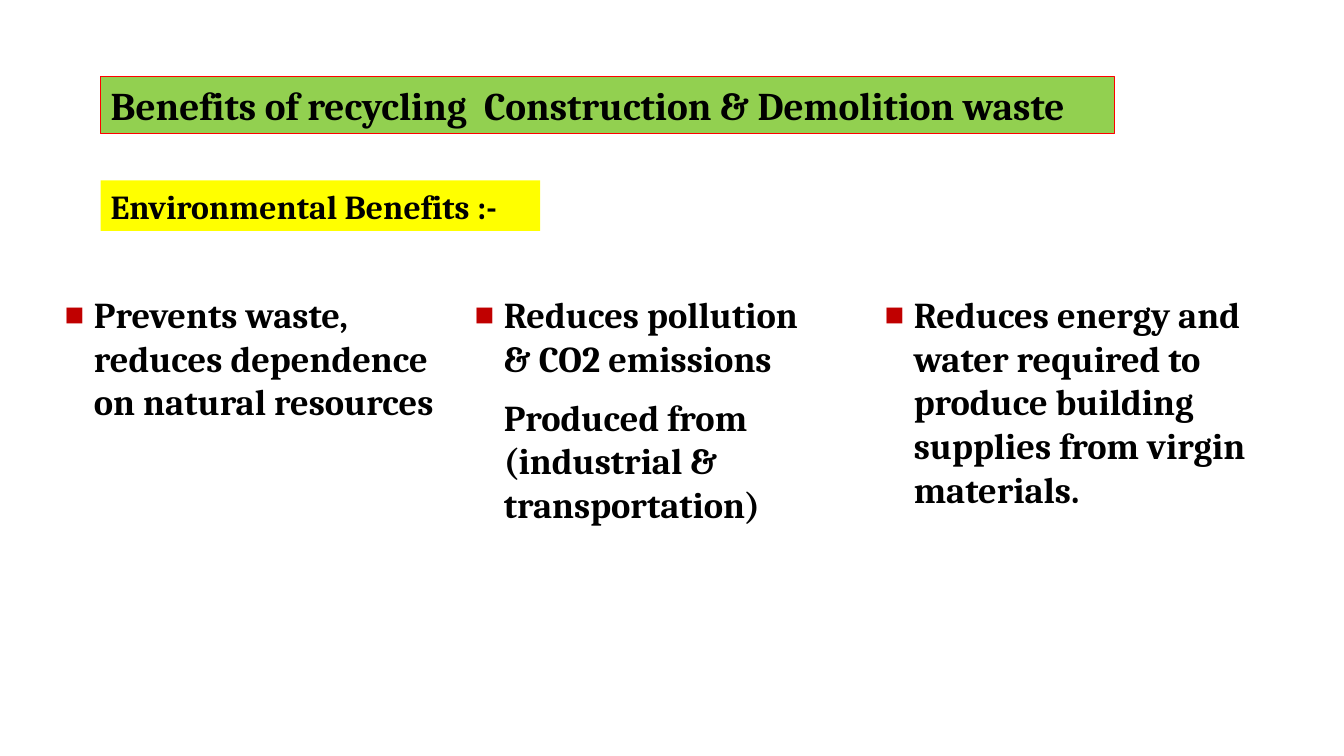
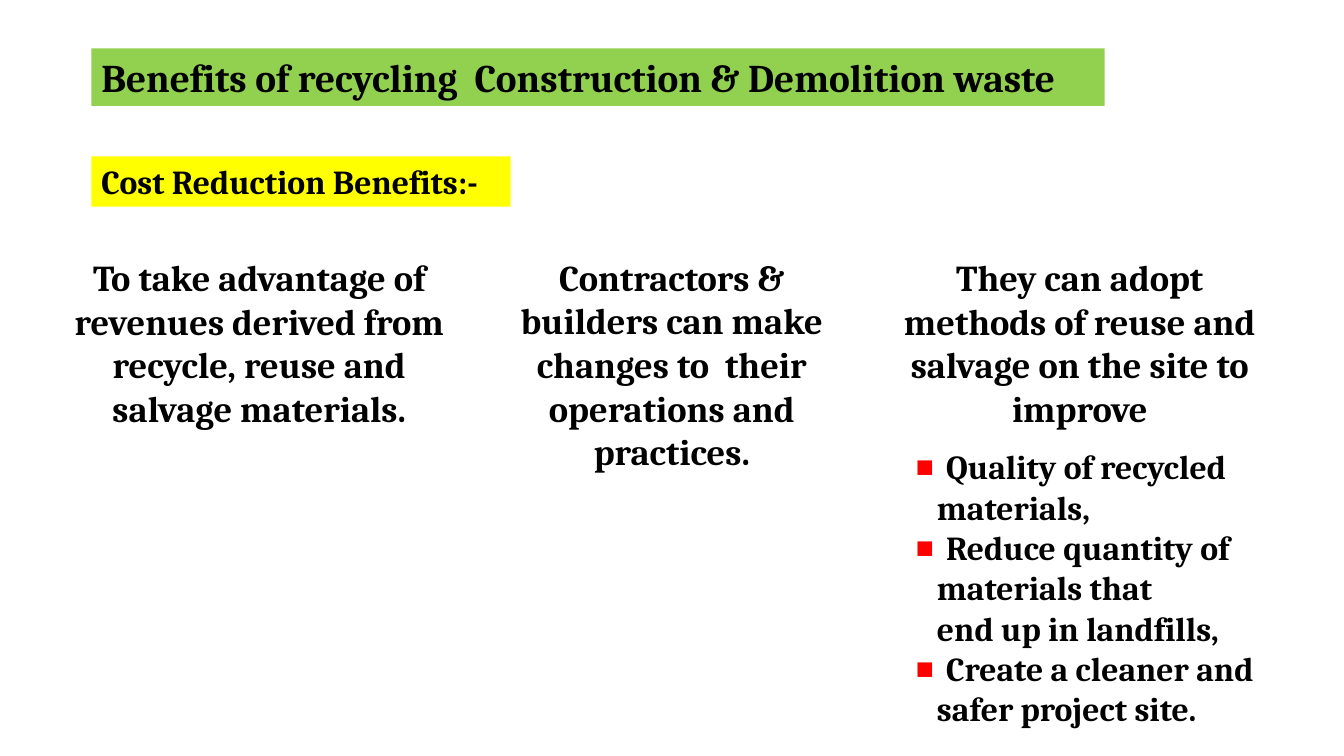
from dataclasses import dataclass

from lxml import etree
from pptx import Presentation
from pptx.dml.color import RGBColor
from pptx.enum.shapes import MSO_SHAPE
from pptx.enum.text import MSO_ANCHOR, MSO_AUTO_SIZE, PP_ALIGN
from pptx.oxml.ns import qn
from pptx.util import Inches, Pt

RECT = MSO_SHAPE.RECTANGLE
TOP = MSO_ANCHOR.TOP
FIT = MSO_AUTO_SIZE.SHAPE_TO_FIT_TEXT
LEFT, CENTER = PP_ALIGN.LEFT, PP_ALIGN.CENTER

W, H = Inches(13.33), Inches(7.5)
FONT = "Cambria"
BLACK, GREEN, YELLOW = "000000", "92D050", "FFFF00"
RED, DARK_RED = "FF0000", "C00000"
TITLE = "Benefits of recycling  Construction & Demolition waste"
TITLE_W, TITLE_H, SUB_H = 75.4, 7.6, 6.67


@dataclass
class Para:
    text: str
    size: int = 26
    align: PP_ALIGN = LEFT
    margin: float = 0
    hang: float = 0
    bullet: str = ""
    before: int = 0
    after: int = 0


@dataclass
class Column:
    x: float
    w: float
    h: float
    paras: list[Para]


@dataclass
class Page:
    x: float
    title_y: float
    title_line: str
    sub_y: float
    sub_w: float
    subtitle: str
    body_y: float
    columns: list[Column]


def color(value: str) -> RGBColor:
    return RGBColor.from_string(value)


def box(x: float, y: float, w: float, h: float) -> list[int]:
    """Turn percent shares of the slide into lengths."""
    return [round(share * side / 100) for share, side in zip((x, y, w, h), (W, H, W, H))]


def set_indent(p, para: Para) -> None:
    pPr = p._p.get_or_add_pPr()
    pPr.set("marL", str(Inches(para.margin)))
    pPr.set("indent", str(-Inches(para.hang)))
    if para.bullet:
        clr = etree.SubElement(pPr, qn("a:buClr"))
        etree.SubElement(clr, qn("a:srgbClr"), val=para.bullet)
        etree.SubElement(pPr, qn("a:buSzPct"), val="150000")
        etree.SubElement(pPr, qn("a:buFont"), typeface=FONT)
        etree.SubElement(pPr, qn("a:buChar"), char="▪")


def add_text(p, text: str, *, size: int, align: PP_ALIGN = LEFT,
             before: int = 0, after: int = 0) -> None:
    p.alignment = align
    p.space_before, p.space_after = Pt(before), Pt(after)
    r = p.add_run()
    r.text = text
    r.font.name, r.font.size, r.font.bold = FONT, Pt(size), True
    r.font.color.rgb = color(BLACK)


def set_frame(tf) -> None:
    tf.word_wrap = True
    tf.auto_size = FIT
    tf.vertical_anchor = TOP


def add_band(s, text: str, frame: list[int], fill: str, size: int, line: str = "") -> None:
    sp = s.shapes.add_shape(RECT, *frame)
    sp.shadow.inherit = False
    sp.fill.solid()
    sp.fill.fore_color.rgb = color(fill)
    if line:
        sp.line.color.rgb = color(line)
        sp.line.width = Pt(0.75)
    else:
        sp.line.fill.background()
    set_frame(sp.text_frame)
    add_text(sp.text_frame.paragraphs[0], text, size=size)


def add_column(s, col: Column, y: float) -> None:
    tf = s.shapes.add_textbox(*box(col.x, y, col.w, col.h)).text_frame
    set_frame(tf)
    for i, para in enumerate(col.paras):
        p = tf.add_paragraph() if i else tf.paragraphs[0]
        set_indent(p, para)
        add_text(p, para.text, size=para.size, align=para.align,
                 before=para.before, after=para.after)


def add_page(prs, page: Page) -> None:
    s = prs.slides.add_slide(prs.slide_layouts[6])
    add_band(s, TITLE, box(page.x, page.title_y, TITLE_W, TITLE_H), GREEN, 28, page.title_line)
    add_band(s, page.subtitle, box(page.x, page.sub_y, page.sub_w, SUB_H), YELLOW, 24)
    for col in page.columns:
        add_column(s, col, page.body_y)


def benefit(text: str) -> Para:
    return Para(text, margin=0.3, hang=0.3, bullet=DARK_RED)


def centered(text: str, after: int = 0) -> Para:
    return Para(text, align=CENTER, after=after)


def goal(first: str, *rest: str) -> list[Para]:
    return [Para(first, 24, margin=0.5, hang=0.31, bullet=RED),
            *(Para(text, 24, margin=0.41) for text in rest)]


PAGES = [
    Page(7.5, 10.13, RED, 23.87, 32.7, "Environmental Benefits :-", 38, [
        Column(4, 29.1, 28.7, [
            benefit("Prevents waste, reduces dependence on natural resources")]),
        Column(34.5, 28, 36.5, [
            benefit("Reduces pollution & CO2 emissions"),
            Para("Produced from (industrial & transportation)", margin=0.3, before=11)]),
        Column(65, 30.6, 34.5, [
            benefit("Reduces energy and water required to produce building "
                    "supplies from virgin materials.")]),
    ]),
    Page(6.8, 6.4, "", 20.67, 31.2, "Cost Reduction Benefits:-", 33.07, [
        Column(4.8, 29, 24.7, [
            centered("To take advantage of revenues derived from recycle, "
                     "reuse and salvage materials.")]),
        Column(36, 28, 30.5, [
            centered("Contractors & builders can make changes to  their "
                     "operations and practices.")]),
        Column(65.9, 28.9, 64.7, [
            centered("They can adopt methods of reuse and salvage on the site to improve", 12),
            *goal("Quality of recycled", "materials,"),
            *goal("Reduce quantity of", "materials that", "end up in landfills,"),
            *goal("Create a cleaner and", "safer project site.")]),
    ]),
]


def main() -> None:
    prs = Presentation()
    prs.slide_width, prs.slide_height = W, H
    for page in PAGES:
        add_page(prs, page)
    prs.save("out.pptx")


if __name__ == "__main__":
    main()
